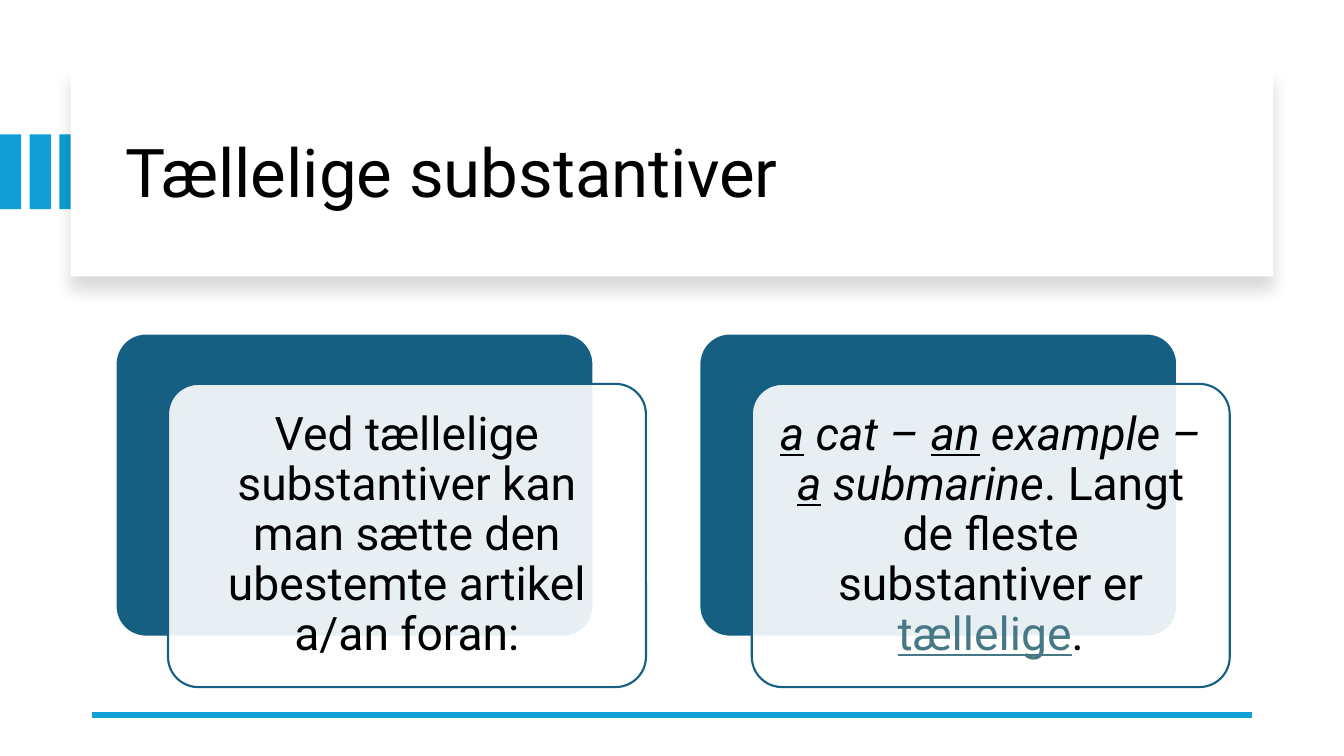
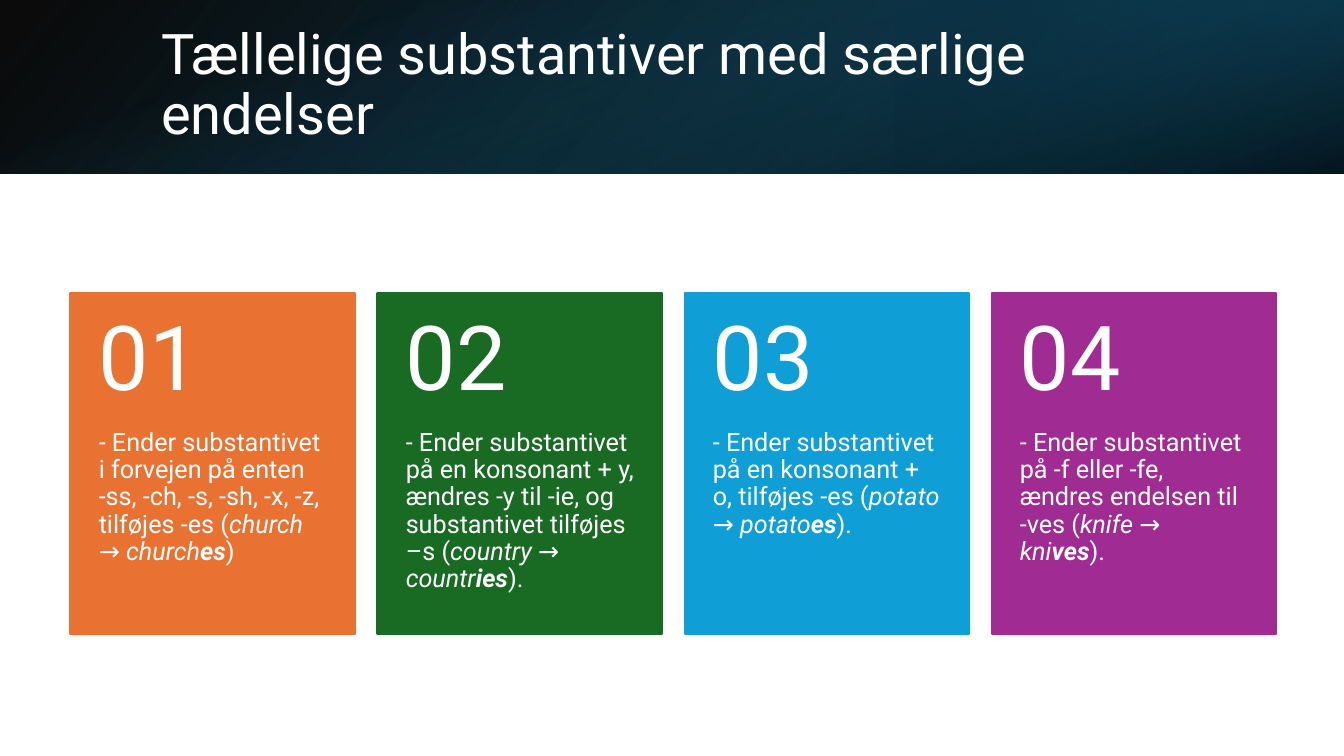
from lxml.etree import SubElement
from pptx import Presentation
from pptx.dml.color import RGBColor
from pptx.enum.shapes import MSO_CONNECTOR, MSO_SHAPE
from pptx.enum.text import MSO_ANCHOR, MSO_AUTO_SIZE, PP_ALIGN
from pptx.oxml.ns import qn
from pptx.util import Inches, Pt

WIDTH, HEIGHT = 13.33, 7.5
COLS, ROWS = 160, 90
FONT = "Roboto"
BLACK, WHITE, TEAL, SKY, LINK = "000000", "FFFFFF", "156082", "0F9ED5", "467886"

CARDS = [
    [("Ved tællelige substantiver kan man sætte den ubestemte artikel a/an foran:", "")],
    [("a", "iu"), (" cat – ", "i"), ("an", "iu"), (" example – ", "i"), ("a", "iu"),
     (" submarine", "i"), (". Langt de fleste substantiver er ", ""),
     ("tællelige", "ul"), (".", "")],
]
TILES = [
    ("E97132", "i forvejen på enten -ss, -ch, -s, -sh, -x, -z, tilføjes -es (",
     "church → church", "es", ")"),
    ("196B24", "på en konsonant + y, ændres -y til -ie, og substantivet tilføjes –s (",
     "country → countr", "ies", ")."),
    (SKY, "på en konsonant + o, tilføjes -es (", "potato → potato", "es", ")."),
    ("A02B93", "på -f eller -fe, ændres endelsen til -ves (", "knife → kni", "ves", ")."),
]


def rgb(value):
    """Turn a hex string into a colour."""
    return RGBColor.from_string(value)


def col(n):
    """Turn grid columns into a length."""
    return Inches(n * WIDTH / COLS)


def row(n):
    """Turn grid rows into a length."""
    return Inches(n * HEIGHT / ROWS)


def place(x, y, w, h):
    """Turn a grid box into left, top, width and height."""
    return col(x), row(y), col(w), row(h)


def add_alpha(clr, percent):
    """Make a colour element partly transparent."""
    SubElement(clr, qn("a:alpha"), val=str(percent * 1000))


def add_box(slide, kind, box, fill, line=None, alpha=100):
    """Add a flat preset shape in a grid box."""
    sp = slide.shapes.add_shape(kind, *place(*box))
    sp.shadow.inherit = False
    sp.fill.solid()
    sp.fill.fore_color.rgb = rgb(fill)
    if alpha < 100:
        add_alpha(sp._element.spPr.find(".//" + qn("a:srgbClr")), alpha)
    if line:
        sp.line.color.rgb = rgb(line)
        sp.line.width = Pt(1.5)
    else:
        sp.line.fill.background()
    return sp


def add_gradient(slide, box, stops, angle, rotation=0, flip=False):
    """Add a rectangle with a translucent linear gradient."""
    sp = add_box(slide, MSO_SHAPE.RECTANGLE, box, BLACK)
    sp.rotation = rotation
    spPr = sp._element.spPr
    if flip:
        spPr.find(qn("a:xfrm")).set("flipH", "1")
    solid = spPr.find(qn("a:solidFill"))
    grad = SubElement(spPr, qn("a:gradFill"), rotWithShape="1")
    spPr.replace(solid, grad)
    gs_list = SubElement(grad, qn("a:gsLst"))
    for pos, colour, alpha in stops:
        gs = SubElement(gs_list, qn("a:gs"), pos=str(pos * 1000))
        add_alpha(SubElement(gs, qn("a:srgbClr"), val=colour), alpha)
    SubElement(grad, qn("a:lin"), ang=str(angle * 60000), scaled="0")


def write(tf, runs, size, colour, align=PP_ALIGN.LEFT, anchor=MSO_ANCHOR.MIDDLE,
          insets=(1.2, 0.6, 1.2, 0.6)):
    """Fill a frame with one paragraph; styles are b, i, u and l for link colour."""
    tf.word_wrap = True
    tf.auto_size = MSO_AUTO_SIZE.NONE
    tf.vertical_anchor = anchor
    left, top, right, bottom = insets
    tf.margin_left, tf.margin_right = col(left), col(right)
    tf.margin_top, tf.margin_bottom = row(top), row(bottom)
    p = tf.paragraphs[0]
    p.alignment = align
    p.line_spacing = 0.9
    p.font.name = FONT
    p.font.size = Pt(size)
    p.font.color.rgb = rgb(colour)
    for text, style in runs:
        r = p.add_run()
        r.text = text
        r.font.name = FONT
        r.font.size = Pt(size)
        r.font.color.rgb = rgb(LINK if "l" in style else colour)
        r.font.bold = "b" in style
        r.font.italic = "i" in style
        r.font.underline = "u" in style


def add_title(slide, text, box, size, colour):
    """Place the title placeholder in front of the header."""
    title = slide.shapes.title
    title.left, title.top, title.width, title.height = place(*box)
    slide.shapes._spTree.append(title._element)
    write(title.text_frame, [(text, "")], size, colour)


def add_panel_header(slide, x, y, w, h):
    """Draw the side stripes and the raised title panel."""
    for i in range(3):
        add_box(slide, MSO_SHAPE.RECTANGLE, (i * 3.53, y + 8, 2.53, 8.9), SKY)
    panel = add_box(slide, MSO_SHAPE.RECTANGLE, (x, y, w, h), WHITE)
    effects = panel._element.spPr.find(qn("a:effectLst"))
    shadow = SubElement(effects, qn("a:outerShdw"), blurRad=str(Pt(11)),
                        dist=str(Pt(10)), dir="5400000", algn="t", rotWithShape="0")
    add_alpha(SubElement(shadow, qn("a:srgbClr"), val=BLACK), 15)
    add_title(slide, "Tællelige substantiver", (x + 5.3, y + 2.7, 133.6, 20.4), 48, BLACK)


def add_rule(slide, x, y, w):
    """Draw the thick line at the foot of the slide."""
    line = slide.shapes.add_connector(MSO_CONNECTOR.STRAIGHT, col(x + w), row(y), col(x), row(y))
    line.line.color.rgb = rgb(SKY)
    line.line.width = Pt(4.5)
    SubElement(line._element.spPr, qn("a:effectLst"))


def add_card(slide, x, y, w, h, runs):
    """Draw a text card overlapping a dark card behind it."""
    back = add_box(slide, MSO_SHAPE.ROUNDED_RECTANGLE, (x, y, w, h), TEAL, WHITE)
    front = add_box(slide, MSO_SHAPE.ROUNDED_RECTANGLE, (x + 6.25, y + 6, w, h), WHITE, TEAL, 90)
    for sp in (back, front):
        sp.adjustments[0] = 0.1
    write(front.text_frame, runs, 33, BLACK, PP_ALIGN.CENTER, insets=(1.7,) * 4)


def add_band_header(slide, h):
    """Draw the layered gradient band and its title."""
    add_gradient(slide, (0, 0, COLS, h), [(0, BLACK, 96), (100, "104862", 100)], 140, flip=True)
    add_gradient(slide, (COLS * 2 / 3, 0, COLS / 3, h),
                 [(19, "0B3041", 68), (100, TEAL, 79)], 320, 180, True)
    add_gradient(slide, ((COLS - h) / 2, (h - COLS) / 2, h, COLS),
                 [(23, TEAL, 0), (99, BLACK, 74)], 340, 90)
    add_title(slide, "Tællelige substantiver med særlige endelser",
              (18, 4.5, 131.8, 11.5), 40, WHITE)


def add_tile(slide, x, y, w, h, number, tile):
    """Draw a coloured tile with its number above its rule."""
    colour, rule, example, ending, close = tile
    add_box(slide, MSO_SHAPE.RECTANGLE, (x, y, w, h), colour, colour)
    body = [("- Ender substantivet " + rule, ""), (example, "i"), (ending, "bi"), (close, "")]
    head = 0.4 * h
    parts = [
        (y + head, h - head, body, 18, MSO_ANCHOR.TOP, (3.36, 0, 3.36, 4.3)),
        (y, head, [(f"{number:02}", "")], 64, MSO_ANCHOR.MIDDLE, (3.36, 2.2, 3.36, 2.2)),
    ]
    for top, height, runs, size, anchor, insets in parts:
        tb = slide.shapes.add_textbox(*place(x, top, w, height))
        write(tb.text_frame, runs, size, WHITE, anchor=anchor, insets=insets)


def build_cards_slide(slide):
    """Build the slide with two overlapping cards."""
    add_panel_header(slide, 8.4, 8, 143.2, 24.9)
    add_rule(slide, 11, 85.1, 138)
    for i, runs in enumerate(CARDS):
        add_card(slide, 13.75 + i * 69.5, 39.7, 56.9, 36.1, runs)


def build_tiles_slide(slide):
    """Build the slide with four numbered tiles."""
    add_band_header(slide, 20.7)
    for i, tile in enumerate(TILES):
        add_tile(slide, 8.4 + i * 36.55, 34.9, 33.9, 40.6, i + 1, tile)


def main():
    """Build and save the presentation."""
    prs = Presentation()
    prs.slide_width, prs.slide_height = Inches(WIDTH), Inches(HEIGHT)
    for build in (build_cards_slide, build_tiles_slide):
        build(prs.slides.add_slide(prs.slide_layouts[5]))
    prs.save("out.pptx")


if __name__ == "__main__":
    main()
